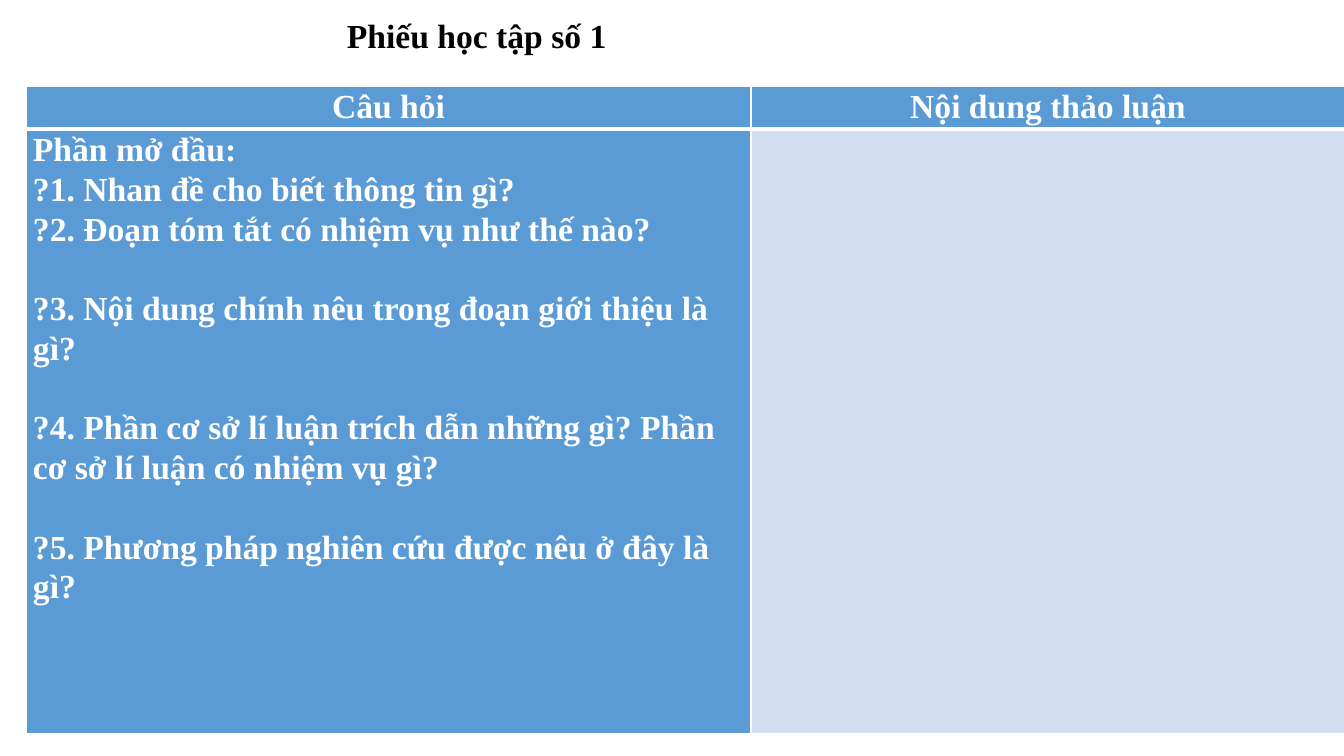
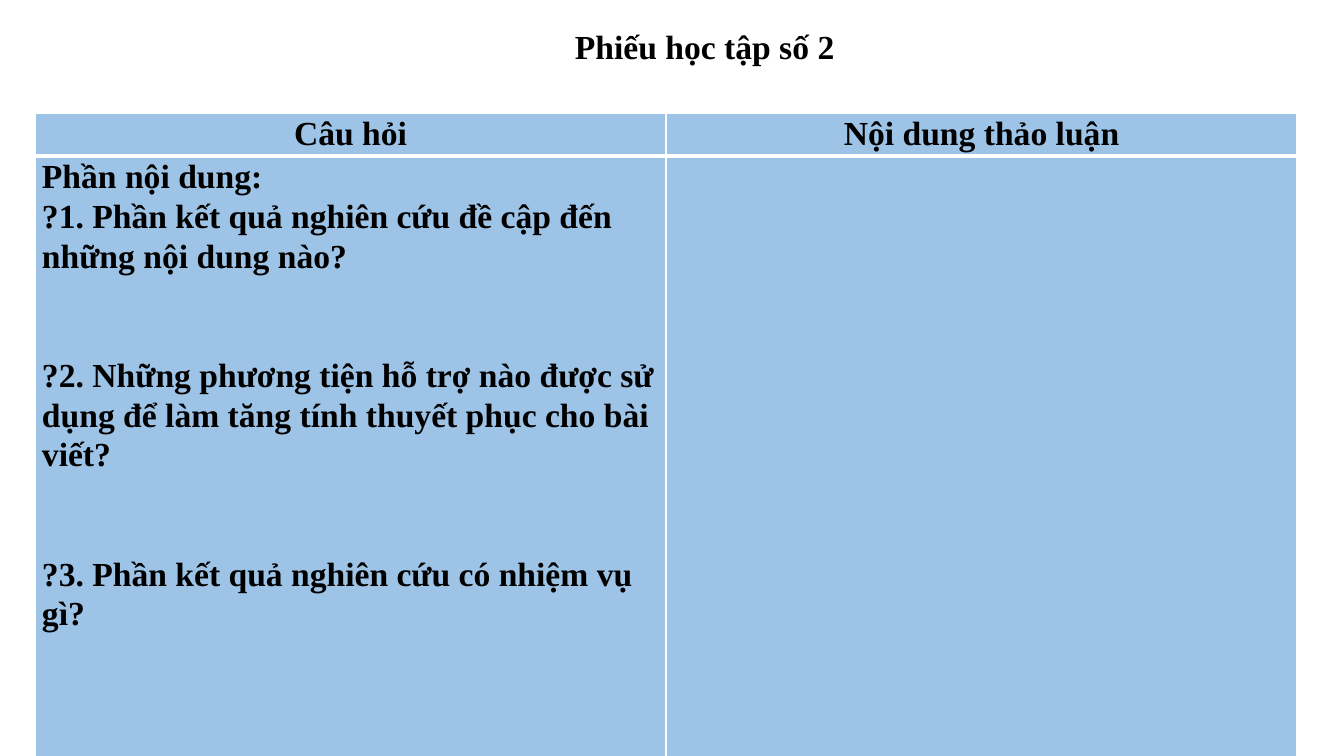
from lxml.etree import SubElement
from pptx import Presentation
from pptx.dml.color import RGBColor
from pptx.enum.text import MSO_ANCHOR, MSO_AUTO_SIZE, PP_ALIGN
from pptx.oxml.ns import qn
from pptx.util import Emu, Pt

SLIDE_WIDTH, SLIDE_HEIGHT = 1344, 756
EMU_PER_PX = 12192000 / SLIDE_WIDTH
FONT = "Times New Roman"
TEXT_SIZE = 24
LINE_SPACING = 1.07
ANSWER_LINE = 28.4  # points: height of one line of text
HEADER_HEIGHT, BODY_HEIGHT = 42, 604
TITLE_HEIGHT = 50
CELL_MARGIN = 7
HEADINGS = ("Câu hỏi", "Nội dung thảo luận")
COLORS = {
    "black": "000000",
    "white": "FFFFFF",
    "blue": "5B9BD5",
    "light blue": "9DC3E6",
    "pale blue": "D2DEEF",
}

# Each question is paired with the number of free lines above it.
OPENING_QUESTIONS = [
    ("Phần mở đầu:", 0),
    ("?1. Nhan đề cho biết thông tin gì?", 0),
    ("?2. Đoạn tóm tắt có nhiệm vụ như thế nào?", 0),
    ("?3. Nội dung chính nêu trong đoạn giới thiệu là gì?", 1),
    ("?4. Phần cơ sở lí luận trích dẫn những gì? "
     "Phần cơ sở lí luận có nhiệm vụ gì?", 1),
    ("?5. Phương pháp nghiên cứu được nêu ở đây là gì?", 1),
]
CONTENT_QUESTIONS = [
    ("Phần nội dung:", 0),
    ("?1. Phần kết quả nghiên cứu đề cập đến những nội dung nào?", 0),
    ("?2. Những phương tiện hỗ trợ nào được sử dụng để làm tăng "
     "tính thuyết phục cho bài viết?", 2),
    ("?3. Phần kết quả nghiên cứu có nhiệm vụ gì?", 2),
]


def px(length):
    return Emu(round(length * EMU_PER_PX))


def rgb(name):
    return RGBColor.from_string(COLORS[name])


def write(para, text, color="black", align=PP_ALIGN.LEFT, spacing=1.0, before=0):
    para.alignment = align
    para.line_spacing = spacing
    para.space_before = Pt(before)
    span = para.add_run()
    span.text = text
    span.font.name = FONT
    span.font.size = Pt(TEXT_SIZE)
    span.font.bold = True
    span.font.color.rgb = rgb(color)


def add_title(page, text, left, top, width):
    box = page.shapes.add_textbox(px(left), px(top), px(width), px(TITLE_HEIGHT))
    frame = box.text_frame
    frame.word_wrap = True
    frame.auto_size = MSO_AUTO_SIZE.SHAPE_TO_FIT_TEXT
    frame.vertical_anchor = MSO_ANCHOR.MIDDLE
    write(frame.paragraphs[0], text)


def style_cell(cell, fill, **borders):
    """Set margins, white borders (points, by side L, R, T, B) and fill."""
    cell.margin_left = cell.margin_right = px(CELL_MARGIN)
    cell.margin_top = cell.margin_bottom = 0
    properties = cell._tc.get_or_add_tcPr()
    for side in "LRTB":
        line = SubElement(properties, qn(f"a:ln{side}"), w=str(Pt(borders.get(side, 1))))
        solid = SubElement(line, qn("a:solidFill"))
        SubElement(solid, qn("a:srgbClr"), val=COLORS["white"])
    cell.fill.solid()
    cell.fill.fore_color.rgb = rgb(fill)


def add_worksheet(page, left, top, widths, questions, fill, answer_fill, color):
    table = page.shapes.add_table(
        2, 2, px(left), px(top), px(sum(widths)), px(HEADER_HEIGHT + BODY_HEIGHT)
    ).table
    for column, width in zip(table.columns, widths):
        column.width = px(width)
    for row, height in zip(table.rows, (HEADER_HEIGHT, BODY_HEIGHT)):
        row.height = px(height)

    for index, heading in enumerate(HEADINGS):
        cell = table.cell(0, index)
        style_cell(cell, fill, B=3)
        write(cell.text_frame.paragraphs[0], heading, color=color,
              align=PP_ALIGN.CENTER, spacing=LINE_SPACING)

    for index, body_fill in enumerate((fill, answer_fill)):
        style_cell(table.cell(1, index), body_fill, T=3)
    frame = table.cell(1, 0).text_frame
    for index, (question, free_lines) in enumerate(questions):
        para = frame.add_paragraph() if index else frame.paragraphs[0]
        write(para, question, color=color, spacing=LINE_SPACING,
              before=free_lines * ANSWER_LINE)


def add_page(deck):
    return deck.slides.add_slide(deck.slide_layouts[6])


def main():
    deck = Presentation()
    deck.slide_width, deck.slide_height = px(SLIDE_WIDTH), px(SLIDE_HEIGHT)

    page = add_page(deck)
    add_title(page, "Phiếu học tập số 1", left=337, top=10, width=308)
    add_worksheet(page, left=26, top=86, widths=(725, 594),
                  questions=OPENING_QUESTIONS, fill="blue",
                  answer_fill="pale blue", color="white")

    page = add_page(deck)
    add_title(page, "Phiếu học tập số 2", left=565, top=21, width=386)
    add_worksheet(page, left=35, top=113, widths=(631, 631),
                  questions=CONTENT_QUESTIONS, fill="light blue",
                  answer_fill="light blue", color="black")

    deck.save("out.pptx")


if __name__ == "__main__":
    main()
